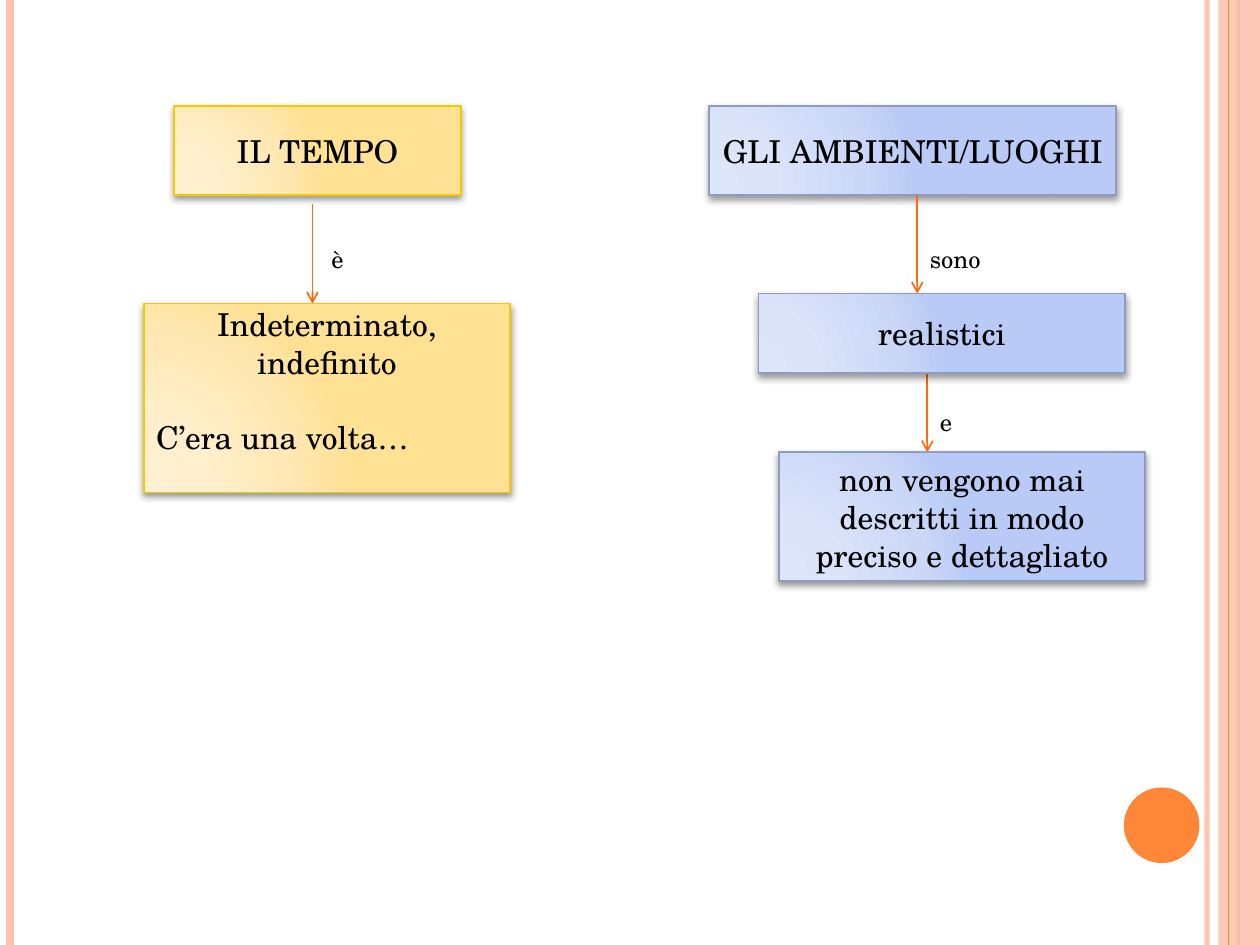
import pptx
import pptx.dml.color
import pptx.enum.shapes
import pptx.enum.text
import pptx.oxml
import pptx.oxml.ns
import pptx.util
from pptx.util import Inches

COLORS = {"peach": "FEC3AE", "orange": "FE8637", "arrow": "FF6B0A", "text": "000000"}
THEMES = {
    "yellow": {"line": "F8C700", "stops": ["FFF0D1", "FFEFCC", "FFE7B1", "FFE193"]},
    "blue": {"line": "8D9CBF", "stops": ["DEE6FA", "DBE4F9", "CAD7F7", "B8CAF5"]},
}
STOP_POSITIONS = [0, 30, 75, 100]
FONT = "TeX Gyre Schola"
ALIGN = pptx.enum.text.PP_ALIGN
ANCHOR = pptx.enum.text.MSO_ANCHOR
SHAPE = pptx.enum.shapes.MSO_SHAPE
NS = pptx.oxml.ns.nsdecls("a")
SLIDE_HEIGHT = 7.5


def rgb(name):
    return pptx.dml.color.RGBColor.from_string(COLORS.get(name, name))


def set_alpha(fill, percent):
    color = fill._xPr.find(".//" + pptx.oxml.ns.qn("a:srgbClr"))
    color.append(pptx.oxml.parse_xml(f'<a:alpha {NS} val="{percent * 1000}"/>'))


class ConceptMap:
    def __init__(self, page):
        self.page = page

    def shape(self, kind, area, color, alpha=100):
        """Add a plain decoration without outline."""
        shape = self.page.shapes.add_shape(kind, *map(Inches, area))
        shape.shadow.inherit = False
        shape.fill.solid()
        shape.fill.fore_color.rgb = rgb(color)
        shape.line.fill.background()
        if alpha < 100:
            set_alpha(shape.fill, alpha)

    def line(self, x, top, bottom, color, width, alpha=100, arrow=False):
        """Add a vertical line, with an arrowhead at the bottom if asked."""
        line = self.page.shapes.add_connector(
            pptx.enum.shapes.MSO_CONNECTOR.STRAIGHT, *map(Inches, (x, top, x, bottom)))
        line.line.color.rgb = rgb(color)
        line.line.width = pptx.util.Pt(width)
        if alpha < 100:
            set_alpha(line.line.fill, alpha)
        if arrow:
            line.line._get_or_add_ln().append(
                pptx.oxml.parse_xml(f'<a:tailEnd {NS} type="arrow"/>'))
        line._element.spPr.append(pptx.oxml.parse_xml(f"<a:effectLst {NS}/>"))

    def text(self, para, words, size, align):
        para.text = words
        para.alignment = align
        formats = {"name": FONT, "size": pptx.util.Pt(size)}
        for key, value in formats.items():
            setattr(para.font, key, value)
        para.font.color.rgb = rgb("text")

    def box(self, area, theme, words):
        """Add a concept box with a radial gradient and a soft shadow."""
        box = self.page.shapes.add_shape(SHAPE.RECTANGLE, *map(Inches, area))
        colors = THEMES[theme]
        stops = "".join(
            f'<a:gs pos="{position * 1000}"><a:srgbClr val="{color}"/></a:gs>'
            for position, color in zip(STOP_POSITIONS, colors["stops"]))
        properties = box._element.spPr
        properties.insert(2, pptx.oxml.parse_xml(
            f'<a:gradFill {NS} rotWithShape="1"><a:gsLst>{stops}</a:gsLst>'
            '<a:path path="circle"><a:fillToRect l="5000" t="100000" r="120000" b="10000"/>'
            '</a:path></a:gradFill>'))
        box.line.color.rgb = rgb(colors["line"])
        box.line.width = pptx.util.Pt(1)
        properties.append(pptx.oxml.parse_xml(
            f'<a:effectLst {NS}><a:outerShdw blurRad="50800" dist="25400" dir="5400000" '
            'rotWithShape="0"><a:srgbClr val="000000"><a:alpha val="40000"/></a:srgbClr>'
            '</a:outerShdw></a:effectLst>'))
        box.text_frame.word_wrap = True
        box.text_frame.vertical_anchor = ANCHOR.MIDDLE
        self.text(box.text_frame.paragraphs[0], words, 18, ALIGN.CENTER)
        return box

    def label(self, x, y, words):
        box = self.page.shapes.add_textbox(*map(Inches, (x, y, 0.6, 0.25)))
        frame = box.text_frame
        frame.word_wrap = True
        for side in ("left", "right", "top", "bottom"):
            setattr(frame, f"margin_{side}", 0)
        self.text(frame.paragraphs[0], words, 14, ALIGN.LEFT)


def main():
    deck = pptx.Presentation()
    deck.slide_width, deck.slide_height = Inches(10), Inches(SLIDE_HEIGHT)
    concept = ConceptMap(deck.slides.add_slide(deck.slide_layouts[6]))

    for x, color, width, alpha in [(9.58, "peach", 3, 93), (0.08, "peach", 4.5, 100),
                                   (9.83, "orange", 1.5, 100)]:
        concept.line(x, 0, SLIDE_HEIGHT, color, width, alpha)
    concept.shape(SHAPE.RECTANGLE, (9.67, 0, 0.33, SLIDE_HEIGHT), "peach", 87)
    concept.line(9.75, 0, SLIDE_HEIGHT, "orange", 0.75)
    concept.shape(SHAPE.OVAL, (8.92, 6.25, 0.6, 0.6), "orange")

    for label in [(2.63, 1.94, "è"), (7.38, 1.94, "sono"), (7.46, 3.23, "e")]:
        concept.label(*label)
    concept.box((1.38, 0.84, 2.28, 0.71), "yellow", "IL TEMPO")
    concept.box((5.63, 0.84, 3.23, 0.71), "blue", "GLI AMBIENTI/LUOGHI")
    for x, top, bottom in [(2.48, 1.62, 2.41), (7.36, 2.81, 3.59), (7.28, 1.55, 2.33)]:
        concept.line(x, top, bottom, "arrow", 1, arrow=True)

    time_box = concept.box((1.14, 2.41, 2.91, 1.5), "yellow", "Indeterminato, indefinito")
    time_box.text_frame.vertical_anchor = ANCHOR.TOP
    time_box.text_frame.margin_top = Inches(0.01)
    example = time_box.text_frame.add_paragraph()
    concept.text(example, "C’era una volta…", 18, ALIGN.LEFT)
    example.space_before = pptx.util.Pt(21.5)

    concept.box((6.18, 3.59, 2.91, 1.02), "blue",
                "non vengono mai descritti in modo preciso e dettagliato")
    concept.box((6.02, 2.33, 2.91, 0.63), "blue", "realistici")
    deck.save("out.pptx")


if __name__ == "__main__":
    main()
